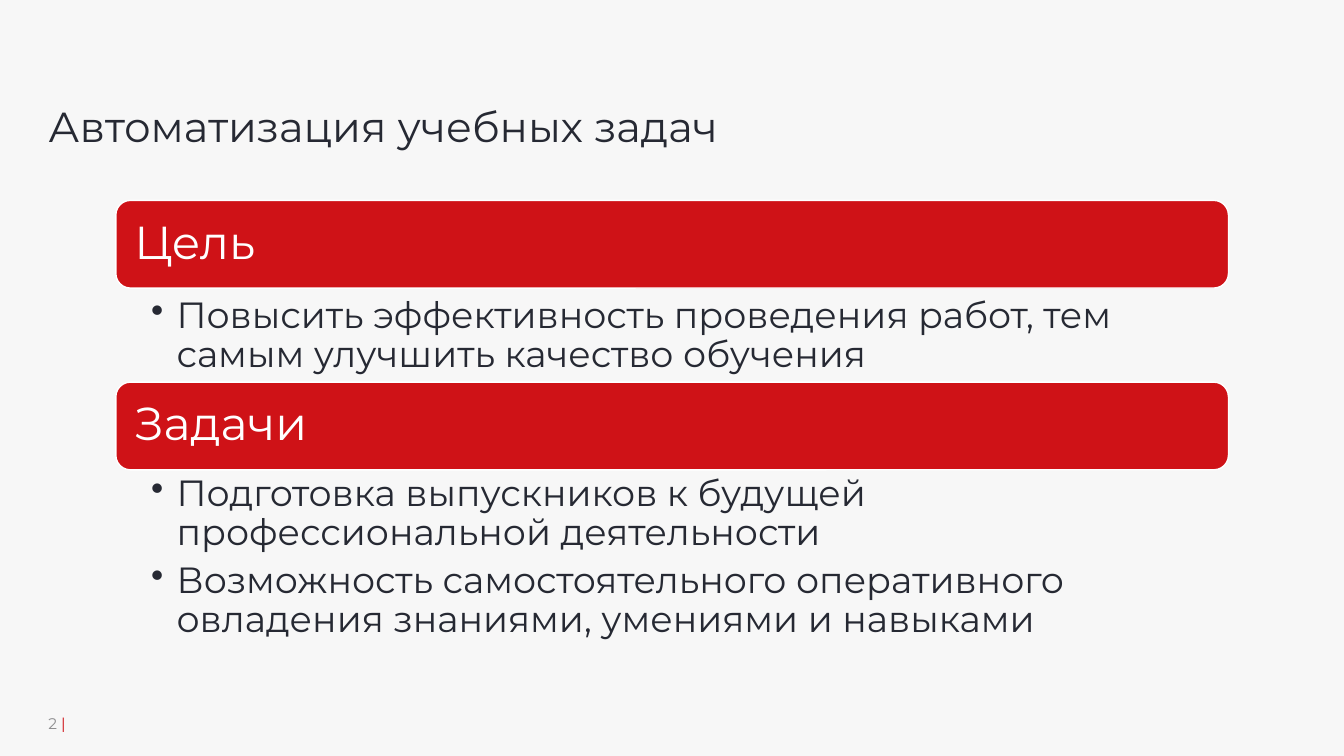
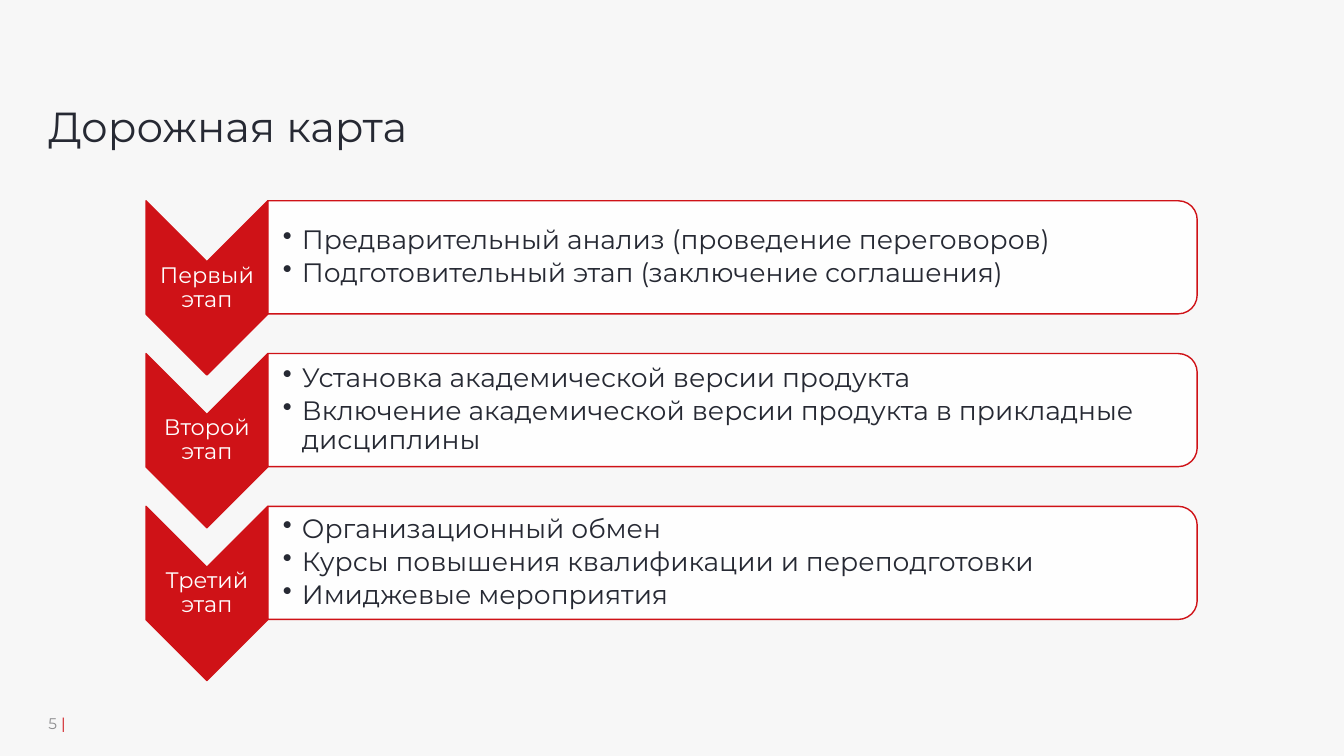
from dataclasses import dataclass

from lxml.etree import SubElement
from pptx import Presentation
from pptx.dml.color import RGBColor
from pptx.enum.shapes import MSO_SHAPE
from pptx.enum.text import MSO_ANCHOR, PP_ALIGN
from pptx.oxml.ns import qn
from pptx.util import Cm, Pt


@dataclass(frozen=True)
class Theme:
    font: str = "Montserrat"
    paper: str = "F7F7F7"
    ink: str = "262933"
    accent: str = "CF1217"
    white: str = "FFFFFF"
    muted: str = "8E8E90"
    title_size: int = 30
    number_size: int = 11
    heading_size: int = 33
    goal_size: int = 26
    stage_size: int = 16
    step_size: int = 19
    line_width: int = 1
    line_spacing: float = 0.9


@dataclass(frozen=True)
class Box:
    """A rectangle in centimetres."""
    left: float
    top: float
    width: float
    height: float

    def lengths(self):
        return Cm(self.left), Cm(self.top), Cm(self.width), Cm(self.height)

    def turned(self):
        """The frame that covers this box after a quarter turn."""
        shift = (self.width - self.height) / 2
        return Box(self.left + shift, self.top - shift, self.height, self.width)


THEME = Theme()
SLIDE_WIDTH, SLIDE_HEIGHT = 33.87, 19.05
DEFAULT_INSETS = (0.25, 0.13, 0.25, 0.13)

GOALS_BOX = Box(2.92, 5.05, 28.04, 11.34)
BAR_HEIGHT = 2.21
GOALS = [
    # heading, gap under the bar, height of the list area, items
    ("Цель", 0.1, 2.37, [
        "Повысить эффективность проведения работ, тем самым улучшить качество обучения",
    ]),
    ("Задачи", 0, 4.55, [
        "Подготовка выпускников к будущей профессиональной деятельности",
        "Возможность самостоятельного оперативного овладения знаниями, умениями и навыками",
    ]),
]

ROADMAP_BOX = Box(3.68, 5.06, 26.49, 12.09)
STAGE_PITCH = 3.85
CHEVRON_WIDTH, CHEVRON_HEIGHT = 3.07, 4.39
PANEL_HEIGHT = 2.85
STAGES = [
    ("Первый этап", [
        "Предварительный анализ (проведение переговоров)",
        "Подготовительный этап (заключение соглашения)",
    ]),
    ("Второй этап", [
        "Установка академической версии продукта",
        "Включение академической версии продукта в прикладные дисциплины",
    ]),
    ("Третий этап", [
        "Организационный обмен",
        "Курсы повышения квалификации и переподготовки",
        "Имиджевые мероприятия",
    ]),
]


def color(value):
    return RGBColor.from_string(value)


def set_frame(frame, insets=DEFAULT_INSETS, anchor=MSO_ANCHOR.MIDDLE):
    frame.word_wrap = True
    frame.vertical_anchor = anchor
    (frame.margin_left, frame.margin_top,
     frame.margin_right, frame.margin_bottom) = map(Cm, insets)


def add_run(para, text, size, ink):
    span = para.add_run()
    span.text = text
    span.font.name = THEME.font
    span.font.size = Pt(size)
    span.font.color.rgb = color(ink)


def write_line(frame, text, size, ink, align=PP_ALIGN.LEFT):
    para = frame.paragraphs[0]
    para.alignment = align
    para.line_spacing = THEME.line_spacing
    add_run(para, text, size, ink)


def write_bullets(frame, items, size, indent, gap):
    for index, item in enumerate(items):
        para = frame.add_paragraph() if index else frame.paragraphs[0]
        properties = para._p.get_or_add_pPr()
        properties.set("marL", str(Cm(indent)))
        properties.set("indent", str(-Cm(indent)))
        SubElement(properties, qn("a:buChar"), char="•")
        para.alignment = PP_ALIGN.LEFT
        para.line_spacing = THEME.line_spacing
        para.space_after = Pt(gap)
        add_run(para, item, size, THEME.ink)


def add_text_frame(page, box, insets=DEFAULT_INSETS, anchor=MSO_ANCHOR.MIDDLE):
    frame = page.shapes.add_textbox(*box.lengths()).text_frame
    set_frame(frame, insets, anchor)
    return frame


def add_filled(page, kind, box, fill, line, rotation=0):
    shape = page.shapes.add_shape(kind, *box.lengths())
    shape.rotation = rotation
    shape.shadow.inherit = False
    shape.fill.solid()
    shape.fill.fore_color.rgb = color(fill)
    shape.line.color.rgb = color(line)
    shape.line.width = Pt(THEME.line_width)
    return shape


def set_opacity(shape, percent):
    fill_color = shape._element.spPr.find(qn("a:solidFill"))[0]
    SubElement(fill_color, qn("a:alpha"), val=str(percent * 1000))


def add_page(deck, title, number):
    """Add a page with the shared background, title and page number."""
    page = deck.slides.add_slide(deck.slide_layouts[6])
    page.background.fill.solid()
    page.background.fill.fore_color.rgb = color(THEME.paper)
    title_frame = add_text_frame(page, Box(0.97, 1.4, 29.21, 3.68))
    write_line(title_frame, title, THEME.title_size, THEME.ink)
    number_frame = add_text_frame(page, Box(0.97, 17.73, 1.88, 1.02))
    para = number_frame.paragraphs[0]
    add_run(para, f"{number} ", THEME.number_size, THEME.muted)
    add_run(para, "|", THEME.number_size, THEME.accent)
    return page


def add_goals(page, box):
    """Stack heading bars, each followed by its bullet list."""
    top = box.top
    for heading, gap, list_height, items in GOALS:
        bar = add_filled(page, MSO_SHAPE.ROUNDED_RECTANGLE,
                         Box(box.left, top, box.width, BAR_HEIGHT),
                         THEME.accent, THEME.white)
        set_frame(bar.text_frame, (0.36,) * 4)
        write_line(bar.text_frame, heading, THEME.heading_size, THEME.white)
        top += BAR_HEIGHT
        frame = add_text_frame(
            page, Box(box.left, top + gap, box.width, list_height - gap),
            (0.89, 0.13, 0.66, 0.13), MSO_ANCHOR.TOP)
        write_bullets(frame, items, THEME.goal_size, indent=0.64, gap=6)
        top += list_height


def add_stage(page, box, name, items):
    """Place a downward chevron and the panel to its right."""
    chevron = Box(box.left, box.top, CHEVRON_WIDTH, CHEVRON_HEIGHT)
    add_filled(page, MSO_SHAPE.CHEVRON, chevron.turned(),
               THEME.accent, THEME.accent, rotation=90)
    label = Box(box.left, box.top + CHEVRON_WIDTH / 2,
                CHEVRON_WIDTH, CHEVRON_HEIGHT - CHEVRON_WIDTH)
    write_line(add_text_frame(page, label, (0.03,) * 4), name,
               THEME.stage_size, THEME.white, PP_ALIGN.CENTER)

    panel = Box(box.left + CHEVRON_WIDTH, box.top,
                box.width - CHEVRON_WIDTH, PANEL_HEIGHT)
    shape = add_filled(page, MSO_SHAPE.ROUND_2_SAME_RECTANGLE, panel.turned(),
                       THEME.white, THEME.accent, rotation=90)
    set_opacity(shape, 90)
    frame = add_text_frame(page, panel, (0.38, 0.03, 0.18, 0.03))
    write_bullets(frame, items, THEME.step_size, indent=0.48, gap=3)


def add_roadmap(page, box):
    for index, (name, items) in enumerate(STAGES):
        row = Box(box.left, box.top + index * STAGE_PITCH,
                  box.width, CHEVRON_HEIGHT)
        add_stage(page, row, name, items)


def main():
    deck = Presentation()
    deck.slide_width, deck.slide_height = Cm(SLIDE_WIDTH), Cm(SLIDE_HEIGHT)
    add_goals(add_page(deck, "Автоматизация учебных задач", 2), GOALS_BOX)
    add_roadmap(add_page(deck, "Дорожная карта", 5), ROADMAP_BOX)
    deck.save("out.pptx")


if __name__ == "__main__":
    main()
